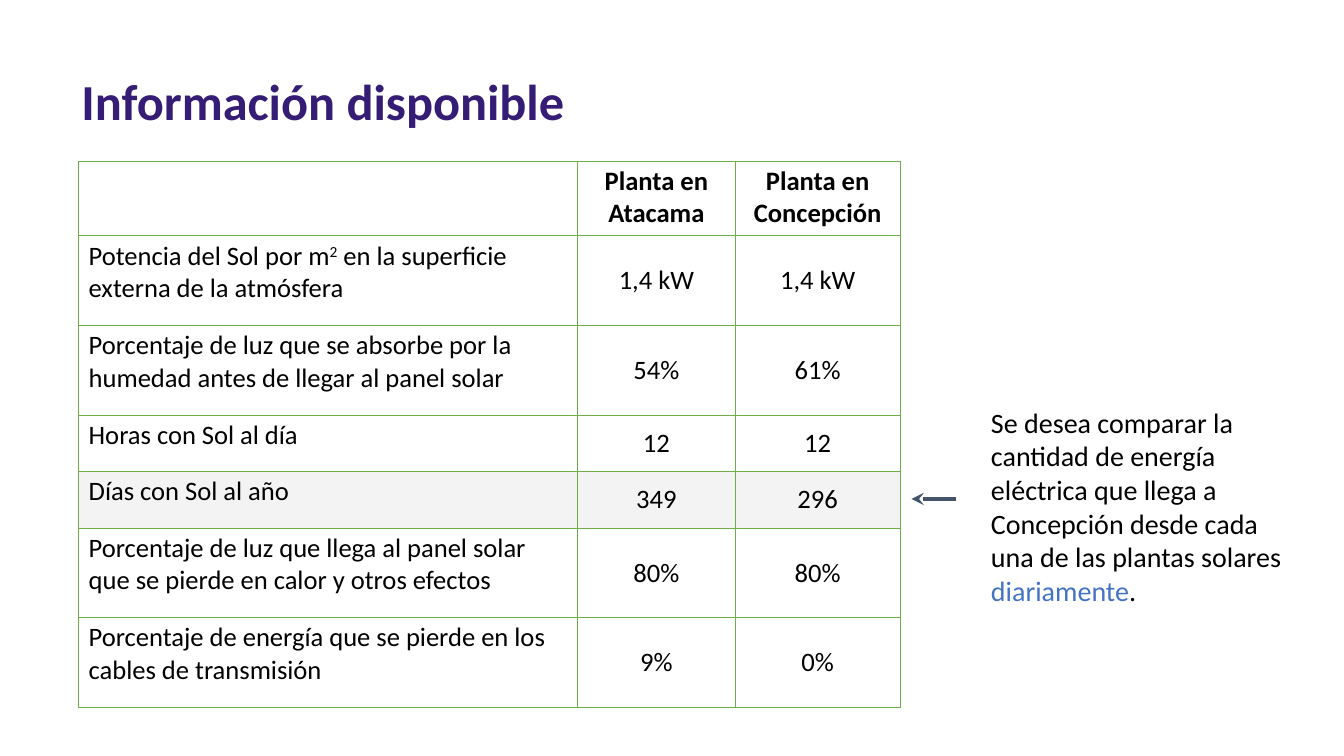
from lxml import etree
from pptx import Presentation
from pptx import util as u
from pptx.dml.color import RGBColor
from pptx.enum import shapes, text
from pptx.oxml.ns import qn

COLORS = {
    "title": "351C75",
    "body": "000000",
    "accent": "4472C4",
    "border": "70AD47",
    "highlight": "F3F3F3",
    "arrow": "44546A",
}
FONT = "Calibri"

COLUMN_WIDTHS = [4.95, 1.56, 1.64]
HEADER_HEIGHT, TALL_ROW, SHORT_ROW = 0.74, 0.89, 0.56
HEADERS = ["", "Planta en Atacama", "Planta en Concepción"]

# Each row: label spans, Atacama, Concepción, height
ROWS = [
    ([("Potencia del Sol por m", {}), ("2", {"superscript": True}),
      (" en la superficie externa de la atmósfera", {})],
     "1,4 kW", "1,4 kW", TALL_ROW),
    ([("Porcentaje de luz que se absorbe por la humedad antes de llegar "
       "al panel solar", {})], "54%", "61%", TALL_ROW),
    ([("Horas con Sol al día", {})], "12", "12", SHORT_ROW),
    ([("Días con Sol al año", {})], "349", "296", SHORT_ROW),
    ([("Porcentaje de luz que llega al panel solar que se pierde en calor "
       "y otros efectos", {})], "80%", "80%", TALL_ROW),
    ([("Porcentaje de energía que se pierde en los cables de transmisión", {})],
     "9%", "0%", TALL_ROW),
]
HIGHLIGHTED_ROW = 4


class SlideBuilder:
    def __init__(self, page, font):
        self.page = page
        self.font = font

    def add_spans(self, para, spans, size, color="body", bold=False):
        for words, changes in spans:
            span = para.add_run()
            span.text = words
            span.font.name = self.font
            span.font.size = u.Pt(size)
            span.font.bold = bold
            span.font.color.rgb = RGBColor.from_string(
                COLORS[changes.get("color", color)])
            if changes.get("superscript"):
                span._r.get_or_add_rPr().set("baseline", "30000")

    def add_text(self, place, spans, size, **style):
        box = self.page.shapes.add_textbox(*map(u.Inches, place))
        box.text_frame.word_wrap = True
        self.add_spans(box.text_frame.paragraphs[0], spans, size, **style)

    def add_table(self, left, top, widths, heights):
        frame = self.page.shapes.add_table(
            len(heights), len(widths), u.Inches(left), u.Inches(top),
            u.Inches(sum(widths)), u.Inches(sum(heights)))
        table = frame.table
        table.first_row = table.horz_banding = False
        for column, width in zip(table.columns, widths):
            column.width = u.Inches(width)
        for row, height in zip(table.rows, heights):
            row.height = u.Inches(height)
        return table

    def fill_cell(self, cell, spans, centered, middle, bold=False, fill=None):
        cell.margin_left = cell.margin_right = u.Inches(0.1)
        cell.margin_top = cell.margin_bottom = u.Inches(0.04)
        if middle:
            cell.vertical_anchor = text.MSO_ANCHOR.MIDDLE
        para = cell.text_frame.paragraphs[0]
        if centered:
            para.alignment = text.PP_ALIGN.CENTER
        self.add_spans(para, spans, 19, bold=bold)
        self.add_borders(cell)
        if fill:
            cell.fill.solid()
            cell.fill.fore_color.rgb = RGBColor.from_string(COLORS[fill])
        else:
            cell.fill.background()

    def add_borders(self, cell):
        properties = cell._tc.get_or_add_tcPr()
        for side in ("lnL", "lnR", "lnT", "lnB"):
            line = etree.SubElement(properties, qn(f"a:{side}"),
                                    w=str(u.Pt(0.75)))
            solid = etree.SubElement(line, qn("a:solidFill"))
            etree.SubElement(solid, qn("a:srgbClr"), val=COLORS["border"])

    def add_arrow(self, start, end):
        arrow = self.page.shapes.add_connector(
            shapes.MSO_CONNECTOR.STRAIGHT, *map(u.Inches, start + end))
        arrow.line.color.rgb = RGBColor.from_string(COLORS["arrow"])
        arrow.line.width = u.Pt(3)
        etree.SubElement(arrow.line._get_or_add_ln(), qn("a:tailEnd"),
                         type="stealth")
        etree.SubElement(arrow._element.spPr, qn("a:effectLst"))


def main():
    deck = Presentation()
    deck.slide_width, deck.slide_height = u.Inches(13.33), u.Inches(7.5)
    page = deck.slides.add_slide(deck.slide_layouts[6])
    builder = SlideBuilder(page, FONT)

    # Title
    builder.add_text((0.71, 0.65, 8.59, 0.71),
                     [("Información disponible", {})], 36,
                     color="title", bold=True)

    # Table of plant data
    heights = [HEADER_HEIGHT] + [row[-1] for row in ROWS]
    table = builder.add_table(0.78, 1.6, COLUMN_WIDTHS, heights)
    for column, header in enumerate(HEADERS):
        spans = [(header, {})] if header else []
        builder.fill_cell(table.cell(0, column), spans, centered=True,
                          middle=False, bold=True)
    for number, (label, atacama, concepcion, _) in enumerate(ROWS, start=1):
        fill = "highlight" if number == HIGHLIGHTED_ROW else None
        contents = [label, [(atacama, {})], [(concepcion, {})]]
        for column, spans in enumerate(contents):
            is_value = column > 0
            builder.fill_cell(table.cell(number, column), spans,
                              centered=is_value, middle=is_value, fill=fill)

    # Note and its arrow to the highlighted row
    builder.add_text((9.73, 3.97, 3.15, 2.12), [
        ("Se desea comparar la cantidad de energía eléctrica que llega a "
         "Concepción desde cada una de las plantas solares ", {}),
        ("diariamente", {"color": "accent"}),
        (".", {}),
    ], 20)
    builder.add_arrow((9.48, 4.95), (9.04, 4.95))

    deck.save("out.pptx")


if __name__ == "__main__":
    main()
